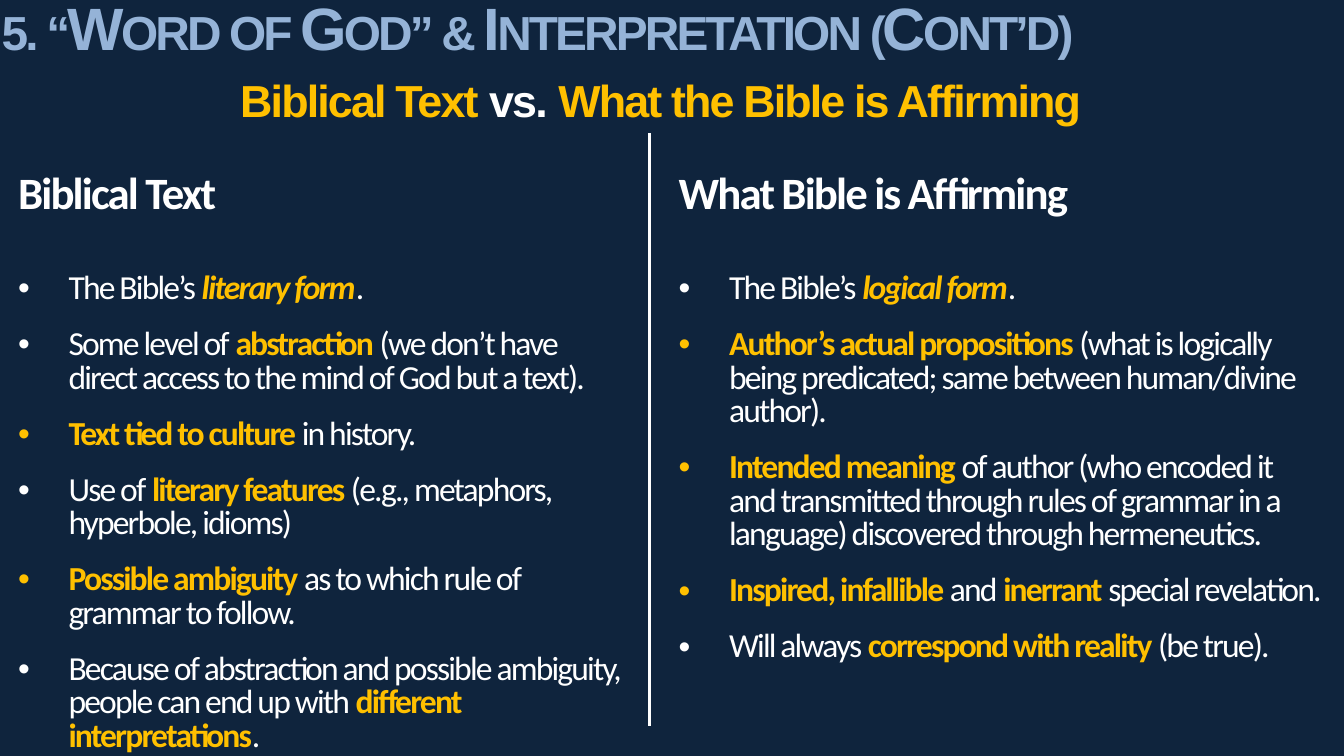
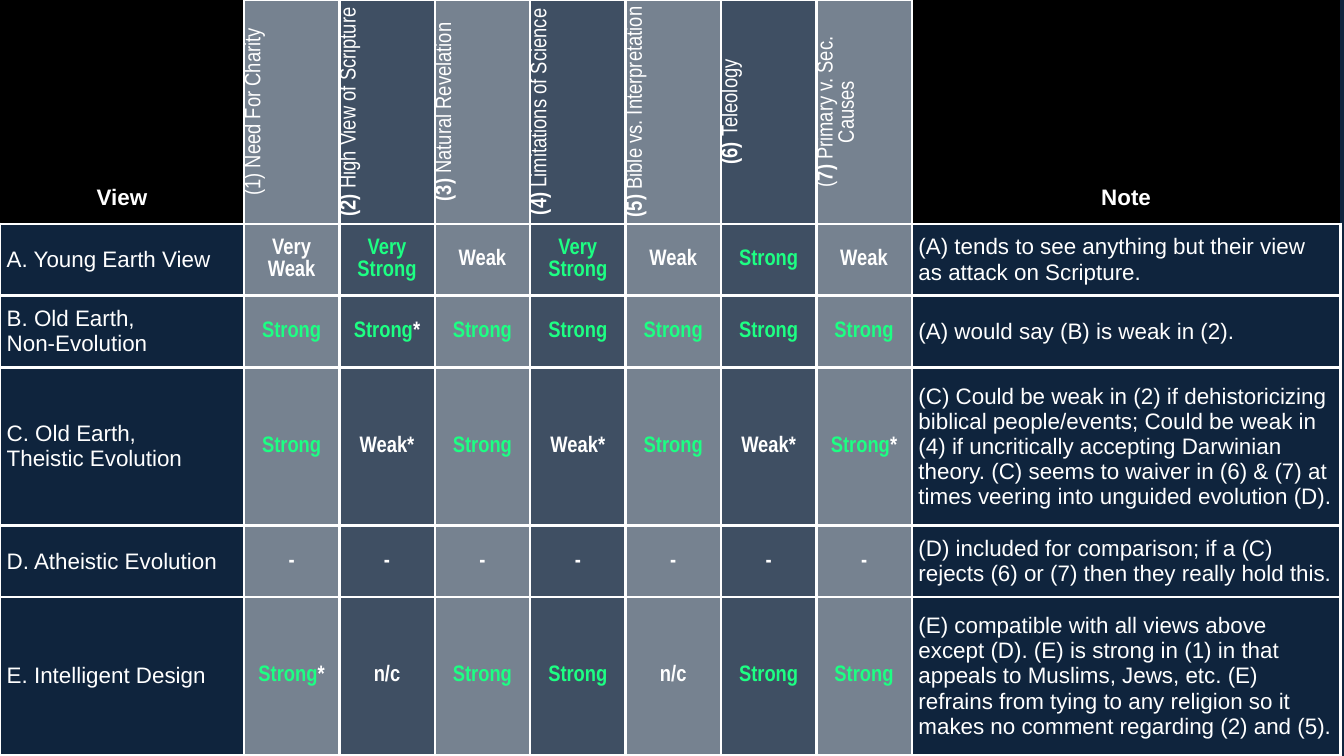
from dataclasses import dataclass, replace

from lxml import etree
from pptx import Presentation
from pptx.dml.color import RGBColor
from pptx.enum.shapes import MSO_CONNECTOR
from pptx.enum.text import MSO_ANCHOR, MSO_AUTO_SIZE, PP_ALIGN
from pptx.oxml.ns import qn
from pptx.util import Emu, Pt

PX = 4572  # 200 px to the inch
W, H = 2000, 1125
CENTER, LEFT = PP_ALIGN.CENTER, PP_ALIGN.LEFT
TOP, MIDDLE, BOTTOM = MSO_ANCHOR.TOP, MSO_ANCHOR.MIDDLE, MSO_ANCHOR.BOTTOM
STRAIGHT = MSO_CONNECTOR.STRAIGHT
FIT_SHAPE = MSO_AUTO_SIZE.SHAPE_TO_FIT_TEXT
NO_STYLE = "{2D5ABB26-0587-4C30-8999-92F81FD0307C}"
COLORS = {
    "navy": "0F243D",
    "sky": "95B3D7",
    "gold": "FFC000",
    "green": "1DFF83",
    "white": "FFFFFF",
    "black": "000000",
}


@dataclass(frozen=True)
class Run:
    text: str
    color: str = "white"
    bold: bool = False
    italic: bool = False


@dataclass(frozen=True)
class Style:
    font: str
    size: int
    align: PP_ALIGN = LEFT
    tracking: int = 0  # hundredths of a point
    small_caps: bool = False
    line: int = 0  # exact line spacing in points
    before: int = 0
    after: int = 0
    bullet: bool = False


@dataclass(frozen=True)
class CellLook:
    anchor: MSO_ANCHOR = TOP
    margins: tuple[int, int, int, int] = (10, 0, 10, 0)
    fill: str = ""
    alpha: int = 100
    vertical: bool = False
    borders: str = ""  # sides in the order L, R, T, B


def px(n: int) -> Emu:
    return Emu(n * PX)


def rgb(name: str) -> RGBColor:
    return RGBColor.from_string(COLORS[name])


def gold(text: str, italic: bool = False) -> Run:
    return Run(text, "gold", True, italic)


# Text

def add_run(p, run: Run, st: Style) -> None:
    for i, part in enumerate(run.text.split("\n")):
        if i:
            p.add_line_break()
        r = p.add_run()
        r.text = part
        f = r.font
        f.name, f.size = st.font, Pt(st.size)
        f.bold, f.italic = run.bold, run.italic
        f.color.rgb = rgb(run.color)
        rpr = r._r.get_or_add_rPr()
        if st.tracking:
            rpr.set("spc", str(st.tracking))
        if st.small_caps:
            rpr.set("cap", "small")


def fill_text(tf, paragraphs: list[list[Run]], st: Style) -> None:
    for i, runs in enumerate(paragraphs):
        p = tf.add_paragraph() if i else tf.paragraphs[0]
        if st.bullet:
            ppr = p._p.get_or_add_pPr()
            ppr.set("marL", str(px(75)))
            ppr.set("indent", str(px(-75)))
            etree.SubElement(ppr, qn("a:buFont")).set("typeface", "Arial")
            etree.SubElement(ppr, qn("a:buChar")).set("char", "•")
        p.alignment = st.align
        if st.line:
            p.line_spacing = Pt(st.line)
        if i and st.before:
            p.space_before = Pt(st.before)
        if st.after:
            p.space_after = Pt(st.after)
        for run in runs:
            add_run(p, run, st)


def add_text(s, x: int, y: int, w: int, h: int, runs: list[Run], st: Style) -> None:
    tf = s.shapes.add_textbox(px(x), px(y), px(w), px(h)).text_frame
    tf.word_wrap = True
    tf.auto_size = FIT_SHAPE
    fill_text(tf, [runs], st)


# Tables

def add_table(s, x: int, y: int, cols: list[int], rows: list[int]):
    frame = s.shapes.add_table(len(rows), len(cols), px(x), px(y),
                               px(sum(cols)), px(sum(rows)))
    table = frame.table
    table.first_row = table.horz_banding = False
    table._tbl.tblPr.find(qn("a:tableStyleId")).text = NO_STYLE
    for col, w in zip(table.columns, cols):
        col.width = px(w)
    for row, h in zip(table.rows, rows):
        row.height = px(h)
    return table


def set_cell(cell, paragraphs: list[list[Run]], st: Style, look: CellLook) -> None:
    cell.vertical_anchor = look.anchor
    (cell.margin_left, cell.margin_top,
     cell.margin_right, cell.margin_bottom) = map(px, look.margins)
    if look.fill:
        cell.fill.solid()
        cell.fill.fore_color.rgb = rgb(look.fill)
    else:
        cell.fill.background()
    tcpr = cell._tc.get_or_add_tcPr()
    if look.alpha < 100:
        color = tcpr.find(qn("a:solidFill"))[0]
        etree.SubElement(color, qn("a:alpha")).set("val", str(look.alpha * 1000))
    if look.vertical:
        tcpr.set("vert", "vert270")
    for i, side in enumerate(look.borders):
        ln = etree.Element(qn(f"a:ln{side}"), w=str(Pt(1.5)))
        solid = etree.SubElement(ln, qn("a:solidFill"))
        etree.SubElement(solid, qn("a:srgbClr")).set("val", COLORS["white"])
        tcpr.insert(i, ln)
    fill_text(cell.text_frame, paragraphs, st)


def new_slide(prs):
    s = prs.slides.add_slide(prs.slide_layouts[6])
    s.background.fill.solid()
    s.background.fill.fore_color.rgb = rgb("navy")
    return s


# Slide 1: text compared with affirmation

TITLE = Style("Arial", 32, tracking=-150, small_caps=True, line=30)
SUBTITLE = Style("Arial", 24, CENTER, tracking=-100)
HEADING = Style("Calibri", 24, tracking=-100, line=24, before=6, after=12)
BULLET = Style("Calibri", 18, tracking=-100, line=18, before=6, after=6, bullet=True)

COMPARISON = {
    "Biblical Text": [
        [Run("The Bible’s "), gold("literary form", True), Run(".")],
        [Run("Some level of "), gold("abstraction"),
         Run(" (we don’t have \ndirect access to the mind of God but a text).")],
        [gold("Text tied to culture "), Run("in history.")],
        [Run("Use of "), gold("literary features "),
         Run("(e.g., metaphors, hyperbole, idioms)")],
        [gold("Possible ambiguity "), Run("as to which rule of \ngrammar to follow.")],
        [Run("Because of abstraction and possible ambiguity, people can end up with "),
         gold("different \ninterpretations"), Run(".")],
    ],
    "What Bible is Affirming": [
        [Run("The Bible’s "), gold("logical form", True), Run(".")],
        [gold("Author’s actual propositions "),
         Run("(what is logically being predicated; same between human/divine author).")],
        [gold("Intended meaning "),
         Run("of author (who encoded it \nand transmitted through rules of grammar "
             "in a language) discovered through hermeneutics.")],
        [gold("Inspired, infallible "), Run("and"), gold(" inerrant "),
         Run("special revelation.")],
        [Run("Will always "), gold("correspond with reality "), Run("(be true).")],
    ],
}


def comparison_slide(prs) -> None:
    s = new_slide(prs)
    add_text(s, -17, 0, W, 104,
             [Run("5. “Word of God” & Interpretation (Cont’d)", "sky", True)], TITLE)

    table = add_table(s, 17, 263, [983, 983], [100, 46, 700])
    look = CellLook()
    for c, (heading, points) in enumerate(COMPARISON.items()):
        set_cell(table.cell(0, c), [[Run(heading, bold=True)]], HEADING, look)
        gap = table.cell(1, c)
        set_cell(gap, [], BULLET, look)
        p = gap.text_frame.paragraphs[0]._p
        etree.SubElement(p, qn("a:endParaRPr")).set("sz", "1000")
        set_cell(table.cell(2, c), points, BULLET, look)

    add_text(s, 308, 98, 1350, 100,
             [gold("Biblical Text "), Run("vs. ", bold=True),
              gold("What the Bible is Affirming")], SUBTITLE)

    # Divider between the columns
    divider = s.shapes.add_connector(STRAIGHT, px(966), px(198), px(966), px(1080))
    divider.line.color.rgb = rgb("white")
    divider.line.width = Pt(1.75)
    etree.SubElement(divider._element.spPr, qn("a:effectLst"))


# Slide 2: views rated by criterion

LABEL = Style("Arial", 12)
CORNER = replace(LABEL, align=CENTER)
RATING = replace(CORNER, font="Arial Narrow")

CRITERIA = [
    [Run("(1) Need For Charity")],
    [Run("(2) ", bold=True), Run("High View of Scripture")],
    [Run("(3) ", bold=True), Run("Natural Revelation")],
    [Run("(4) ", bold=True), Run("Limitations of Science")],
    [Run("(5) ", bold=True), Run("Bible vs. Interpretation")],
    [Run("(6) ", bold=True), Run("Teleology")],
    [Run("("), Run("7)", bold=True), Run(" Primary v. Sec. Causes")],
]


@dataclass(frozen=True)
class View:
    name: str
    ratings: list[str]
    note: str
    height: int


VIEWS = [
    View("A. Young Earth View",
         ["Very\nWeak", "Very\nStrong", "Weak", "Very\nStrong", "Weak", "Strong", "Weak"],
         "(A) tends to see anything but their view as attack on Scripture.", 107),
    View("B. Old Earth, \nNon-Evolution",
         ["Strong", "Strong*"] + ["Strong"] * 5,
         "(A) would say (B) is weak in (2).", 107),
    View("C. Old Earth, \nTheistic Evolution",
         ["Strong", "Weak*"] * 3 + ["Strong*"],
         "(C) Could be weak in (2) if dehistoricizing biblical people/events; Could be "
         "weak in (4) if uncritically accepting Darwinian theory. (C) seems to waiver in "
         "(6) & (7) at times veering into unguided evolution (D).", 235),
    View("D. Atheistic Evolution", ["-"] * 7,
         "(D) included for comparison; if a (C) rejects (6) or (7) then they really "
         "hold this.", 107),
    View("E. Intelligent Design",
         ["Strong*", "n/c", "Strong", "Strong", "n/c", "Strong", "Strong"],
         "(E) compatible with all views above except (D). (E) is strong in (1) in that "
         "appeals to Muslims, Jews, etc. (E) refrains from tying to any religion so it "
         "makes no comment regarding (2) and (5).", 235),
]


def rating_runs(rating: str) -> list[Run]:
    if "Strong" not in rating:
        return [Run(rating, bold=True)]
    runs = [Run(rating.rstrip("*"), "green", True)]
    if rating.endswith("*"):
        runs.append(Run("*", bold=True))
    return runs


def ratings_slide(prs) -> None:
    s = new_slide(prs)
    n = len(CRITERIA)
    table = add_table(s, 0, 0, [363] + [142] * n + [638],
                      [333] + [v.height for v in VIEWS])
    corner = CellLook(BOTTOM, (10, 0, 10, 20), "black")
    body = CellLook(MIDDLE, (10, 10, 10, 10), borders="LRTB")
    stripes = [replace(body, fill="white", alpha=20 if c % 2 else 43) for c in range(n)]

    # Header row
    for c, text, sides in ((0, "View", "RB"), (n + 1, "Note", "LB")):
        set_cell(table.cell(0, c), [[Run(text, bold=True)]], CORNER,
                 replace(corner, borders=sides))
    for c, runs in enumerate(CRITERIA):
        look = replace(stripes[c], margins=(10, 0, 10, 0), vertical=True)
        set_cell(table.cell(0, c + 1), [runs], RATING, look)

    # One row per view
    for i, view in enumerate(VIEWS, 1):
        set_cell(table.cell(i, 0), [[Run(view.name)]], LABEL, body)
        for c, rating in enumerate(view.ratings):
            set_cell(table.cell(i, c + 1), [rating_runs(rating)], RATING, stripes[c])
        set_cell(table.cell(i, n + 1), [[Run(view.note)]], LABEL, body)


def main() -> None:
    prs = Presentation()
    prs.slide_width, prs.slide_height = px(W), px(H)
    comparison_slide(prs)
    ratings_slide(prs)
    prs.save("out.pptx")


if __name__ == "__main__":
    main()
